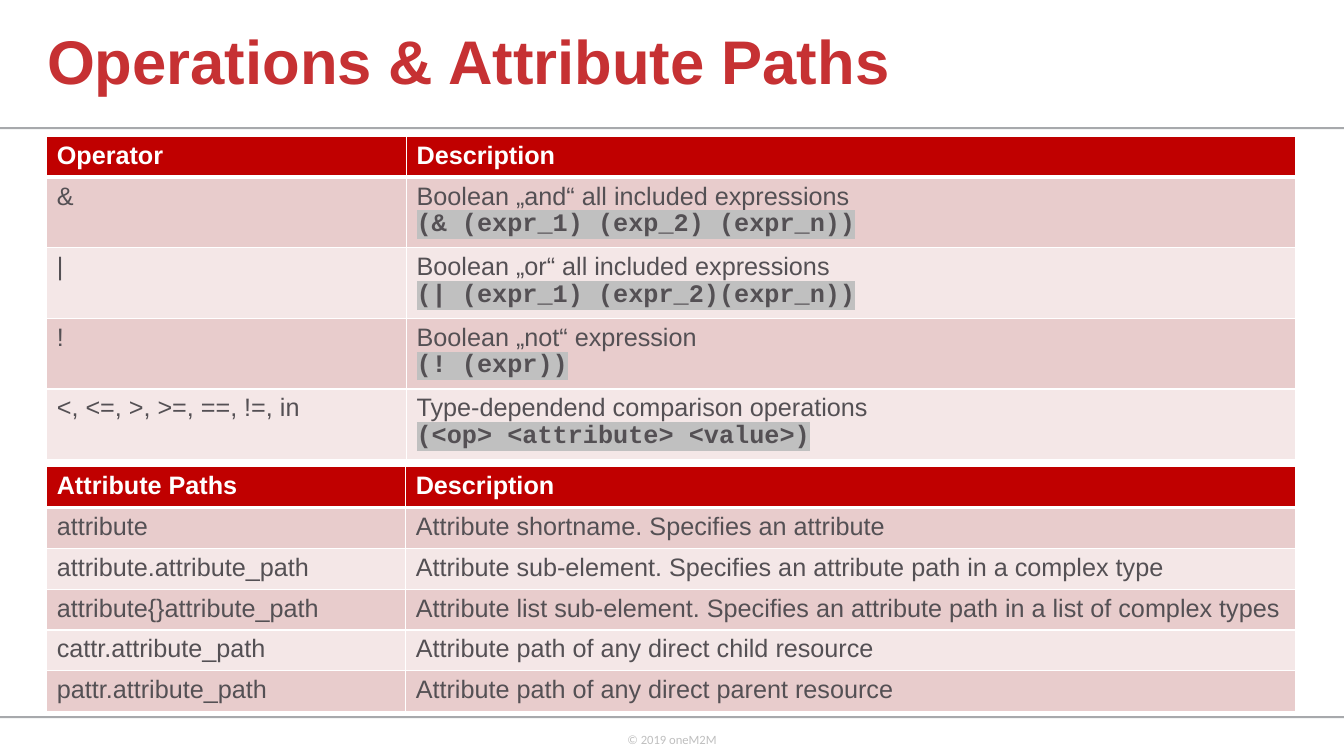
from lxml.etree import SubElement
from pptx import Presentation
from pptx.dml.color import RGBColor
from pptx.enum.shapes import MSO_SHAPE
from pptx.enum.text import MSO_ANCHOR, MSO_AUTO_SIZE, PP_ALIGN
from pptx.oxml.ns import qn
from pptx.util import Pt

WIDE, HIGH = 960, 540
LEFT, SPAN = 33.4, 892
ROW = 29.2

HUES = {
    "title": "C63133",
    "rule": "A7A9AC",
    "foot": "BFBFBF",
    "head": "C00000",
    "odd": "E8CCCC",
    "even": "F4E7E7",
    "text": "545054",
    "white": "FFFFFF",
    "code": "C0C0C0",
}

OPS = [
    ("Operator", "Description"),
    ("&", "Boolean „and“ all included expressions", "(& (expr_1) (exp_2) (expr_n))"),
    ("|", "Boolean „or“ all included expressions", "(| (expr_1) (expr_2)(expr_n))"),
    ("!", "Boolean „not“ expression", "(! (expr))"),
    ("<, <=, >, >=, ==, !=, in", "Type-dependend comparison operations",
     "(<op> <attribute> <value>)"),
]
PATHS = [
    ("Attribute Paths", "Description"),
    ("attribute", "Attribute shortname. Specifies an attribute"),
    ("attribute.attribute_path",
     "Attribute sub-element. Specifies an attribute path in a complex type"),
    ("attribute{}attribute_path",
     "Attribute list sub-element. Specifies an attribute path in a list of complex types"),
    ("cattr.attribute_path", "Attribute path of any direct child resource"),
    ("pattr.attribute_path", "Attribute path of any direct parent resource"),
]


def hue(name):
    return RGBColor.from_string(HUES[name])


def style(para, size, color, bold=False, face="Arial"):
    font = para.font
    font.size, font.bold, font.name = Pt(size), bold, face
    font.color.rgb = hue(color)


def tint(parent, tag, color):
    node = SubElement(parent, qn(tag))
    SubElement(node, qn("a:srgbClr")).set("val", HUES[color])


def edge(cell, row):
    props = cell._tc.get_or_add_tcPr()
    widths = {"L": 1, "R": 1, "T": 3 if row == 1 else 1, "B": 3 if row == 0 else 1}
    for side, width in widths.items():
        line = SubElement(props, qn("a:ln" + side))
        line.set("w", str(Pt(width)))
        tint(line, "a:solidFill", "white")


def add_rule(slide, x, y, w, h):
    rule = slide.shapes.add_shape(MSO_SHAPE.RECTANGLE, Pt(x), Pt(y), Pt(w), Pt(h))
    rule.shadow.inherit = False
    rule.fill.solid()
    rule.fill.fore_color.rgb = hue("rule")
    rule.line.fill.background()


def add_title(slide, x, y, w, h):
    title = slide.shapes.title
    title.left, title.top, title.width, title.height = Pt(x), Pt(y), Pt(w), Pt(h)
    frame = title.text_frame
    frame.text = "Operations & Attribute Paths"
    frame.vertical_anchor = MSO_ANCHOR.MIDDLE
    frame.auto_size = MSO_AUTO_SIZE.NONE
    para = frame.paragraphs[0]
    para.alignment = PP_ALIGN.LEFT
    para.line_spacing = 0.9
    style(para, 44, "title", True)


def add_foot(slide, x, y, w, h):
    frame = slide.shapes.add_textbox(Pt(x), Pt(y), Pt(w), Pt(h)).text_frame
    frame.word_wrap = False
    frame.text = "© 2019 oneM2M"
    para = frame.paragraphs[0]
    para.alignment = PP_ALIGN.CENTER
    style(para, 9, "foot", face="Calibri")


def fill_cell(cell, row, text, code=None):
    edge(cell, row)
    cell.fill.solid()
    cell.fill.fore_color.rgb = hue("head" if row == 0 else "odd" if row % 2 else "even")
    frame = cell.text_frame
    frame.text = text
    style(frame.paragraphs[0], 18, "text" if row else "white", row == 0)
    if code:
        para = frame.add_paragraph()
        run = para.add_run()
        run.text = code
        tint(run.font._element, "a:highlight", "code")
        style(para, 18, "text", True, "Courier New")


def add_grid(slide, data, split, x, y, w, h):
    grid = slide.shapes.add_table(len(data), 2, Pt(x), Pt(y), Pt(w), Pt(h)).table
    grid.columns[0].width = Pt(split)
    grid.columns[1].width = Pt(w - split)
    for row, (key, *about) in enumerate(data):
        grid.rows[row].height = Pt(h / len(data))
        fill_cell(grid.cell(row, 0), row, key)
        fill_cell(grid.cell(row, 1), row, *about)


def main():
    deck = Presentation()
    deck.slide_width, deck.slide_height = Pt(WIDE), Pt(HIGH)
    slide = deck.slides.add_slide(deck.slide_layouts[5])
    for y in (90.8, 511.6):
        add_rule(slide, 0, y, WIDE, 1.4)
    add_foot(slide, 440.5, 519, 79, 29)
    add_title(slide, 26.4, 0, 660, 92)
    add_grid(slide, OPS, 257, LEFT, 97.4, SPAN, ROW * len(OPS))
    add_grid(slide, PATHS, 256.4, LEFT, 333.2, SPAN, ROW * len(PATHS))
    deck.save("out.pptx")


if __name__ == "__main__":
    main()
